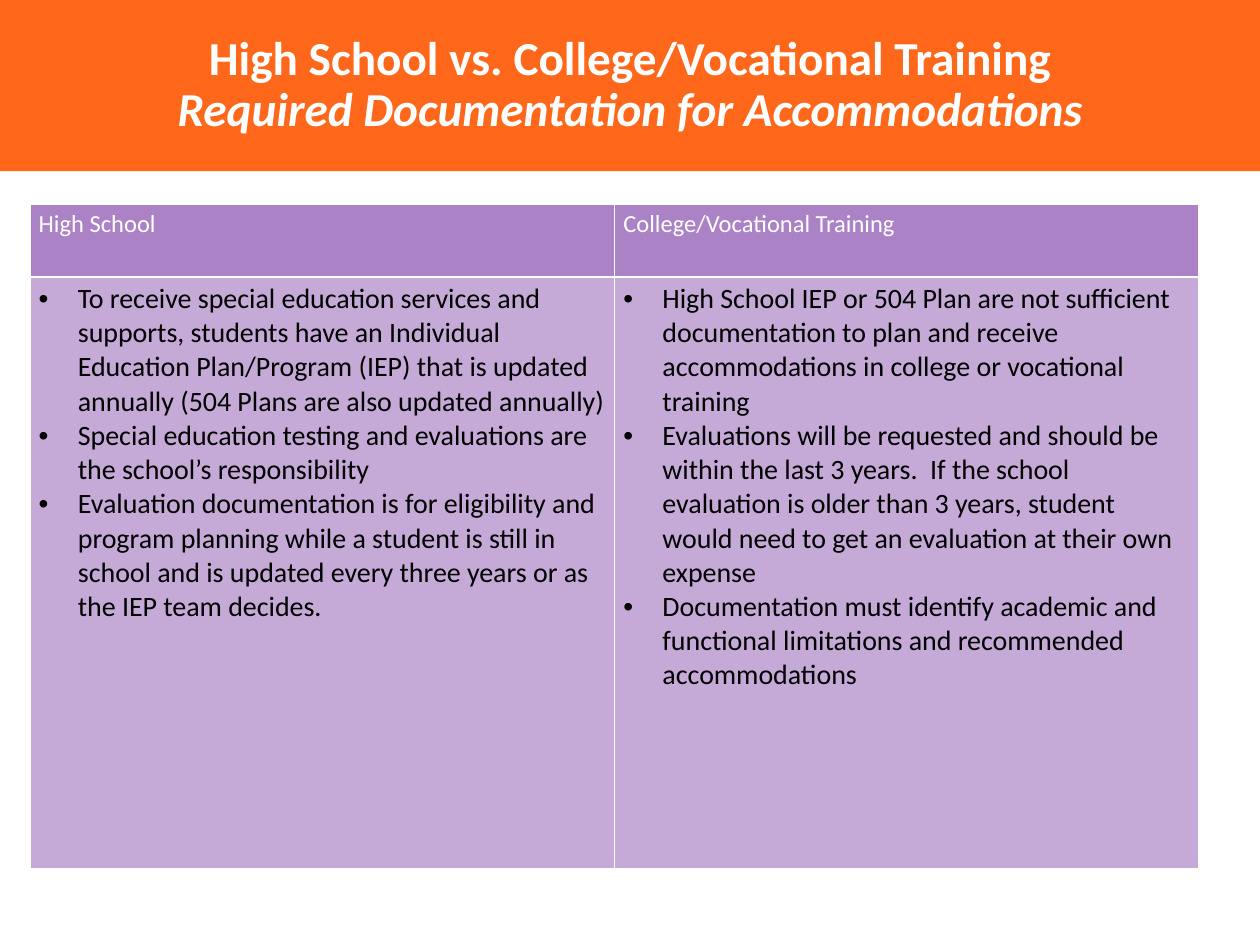
from lxml import etree
from pptx import Presentation
from pptx import util as u
from pptx.dml import color
from pptx.enum import text as t
from pptx.oxml import ns

COLUMNS = {
    "High School": [
        "To receive special education services and supports, students have an Individual "
        "Education Plan/Program (IEP) that is updated annually (504 Plans are also updated annually)",
        "Special education testing and evaluations are the school’s responsibility",
        "Evaluation documentation is for eligibility and program planning while a student is "
        "still in school and is updated every three years or as the IEP team decides.",
    ],
    "College/Vocational Training": [
        "High School IEP or 504 Plan are not sufficient documentation to plan and receive "
        "accommodations in college or vocational training",
        "Evaluations will be requested and should be within the last 3 years.  If the school "
        "evaluation is older than 3 years, student would need to get an evaluation at their own expense",
        "Documentation must identify academic and functional limitations and recommended accommodations",
    ],
}


def rgb(value):
    return color.RGBColor.from_string(value)


def paint(target, value):
    target.fill.solid()
    target.fill.fore_color.rgb = rgb(value)


def write(paragraph, content, size=16, fill="000000", bold=False, italic=False, font="Calibri"):
    run = paragraph.add_run()
    run.text = content
    run.font.name = font
    run.font.size = u.Pt(size)
    run.font.bold = bold
    run.font.italic = italic
    run.font.color.rgb = rgb(fill)


def add_bullet(paragraph, indent):
    properties = paragraph._p.get_or_add_pPr()
    properties.set("marL", str(indent))
    properties.set("indent", str(-indent))
    etree.SubElement(properties, ns.qn("a:buFont"), typeface="Arial")
    etree.SubElement(properties, ns.qn("a:buChar"), char="•")


def add_borders(cell, value, width):
    properties = cell._tc.get_or_add_tcPr()
    for side in ("lnL", "lnR", "lnT", "lnB"):
        line = etree.SubElement(properties, ns.qn(f"a:{side}"), w=str(u.Pt(width)))
        solid = etree.SubElement(line, ns.qn("a:solidFill"))
        etree.SubElement(solid, ns.qn("a:srgbClr"), val=value)


class SlideBuilder:
    WHITE, BANNER, HEADER, BODY = "FFFFFF", "FF671B", "AB82C5", "C5A9D7"

    def __init__(self, slide):
        self.slide = slide

    def title(self, first_line, second_line, width, height):
        shape = self.slide.shapes.title
        shape.left, shape.top, shape.width, shape.height = 0, 0, width, height
        paint(shape, self.BANNER)
        frame = shape.text_frame
        frame.word_wrap = True
        frame.auto_size = t.MSO_AUTO_SIZE.NONE
        frame.vertical_anchor = t.MSO_ANCHOR.MIDDLE
        paragraph = frame.paragraphs[0]
        paragraph.alignment = t.PP_ALIGN.CENTER
        paragraph.line_spacing = 0.9
        paragraph.space_before = u.Pt(0)
        write(paragraph, first_line, size=27, fill=self.WHITE, bold=True)
        paragraph.add_line_break()
        write(paragraph, second_line, size=27, fill=self.WHITE, bold=True, italic=True)

    def cell(self, cell, fill):
        cell.margin_left = cell.margin_right = u.Cm(0.18)
        cell.margin_top = cell.margin_bottom = u.Cm(0.1)
        add_borders(cell, self.WHITE, 1)
        paint(cell, fill)
        return cell.text_frame

    def table(self, columns, left, top, width, row_heights):
        table = self.slide.shapes.add_table(
            len(row_heights), len(columns), left, top, width, sum(row_heights)).table
        for row, height in zip(table.rows, row_heights):
            row.height = height
        for index, (heading, points) in enumerate(columns.items()):
            frame = self.cell(table.cell(0, index), self.HEADER)
            write(frame.paragraphs[0], heading, size=14, fill=self.WHITE)
            frame = self.cell(table.cell(1, index), self.BODY)
            for number, point in enumerate(points):
                paragraph = frame.add_paragraph() if number else frame.paragraphs[0]
                add_bullet(paragraph, u.Cm(0.79))
                write(paragraph, point)


def main():
    presentation = Presentation()
    presentation.slide_width, presentation.slide_height = u.Cm(25.4), u.Cm(19.05)
    title_only = presentation.slide_layouts[5]
    builder = SlideBuilder(presentation.slides.add_slide(title_only))

    # Title banner
    builder.title("High School vs. College/Vocational Training",
                  "Required Documentation for Accommodations",
                  presentation.slide_width, u.Cm(3.45))

    # Comparison table
    builder.table(COLUMNS, u.Cm(0.6), u.Cm(4.11), u.Cm(23.57), [u.Cm(1.47), u.Cm(11.93)])

    presentation.save("out.pptx")


if __name__ == "__main__":
    main()
